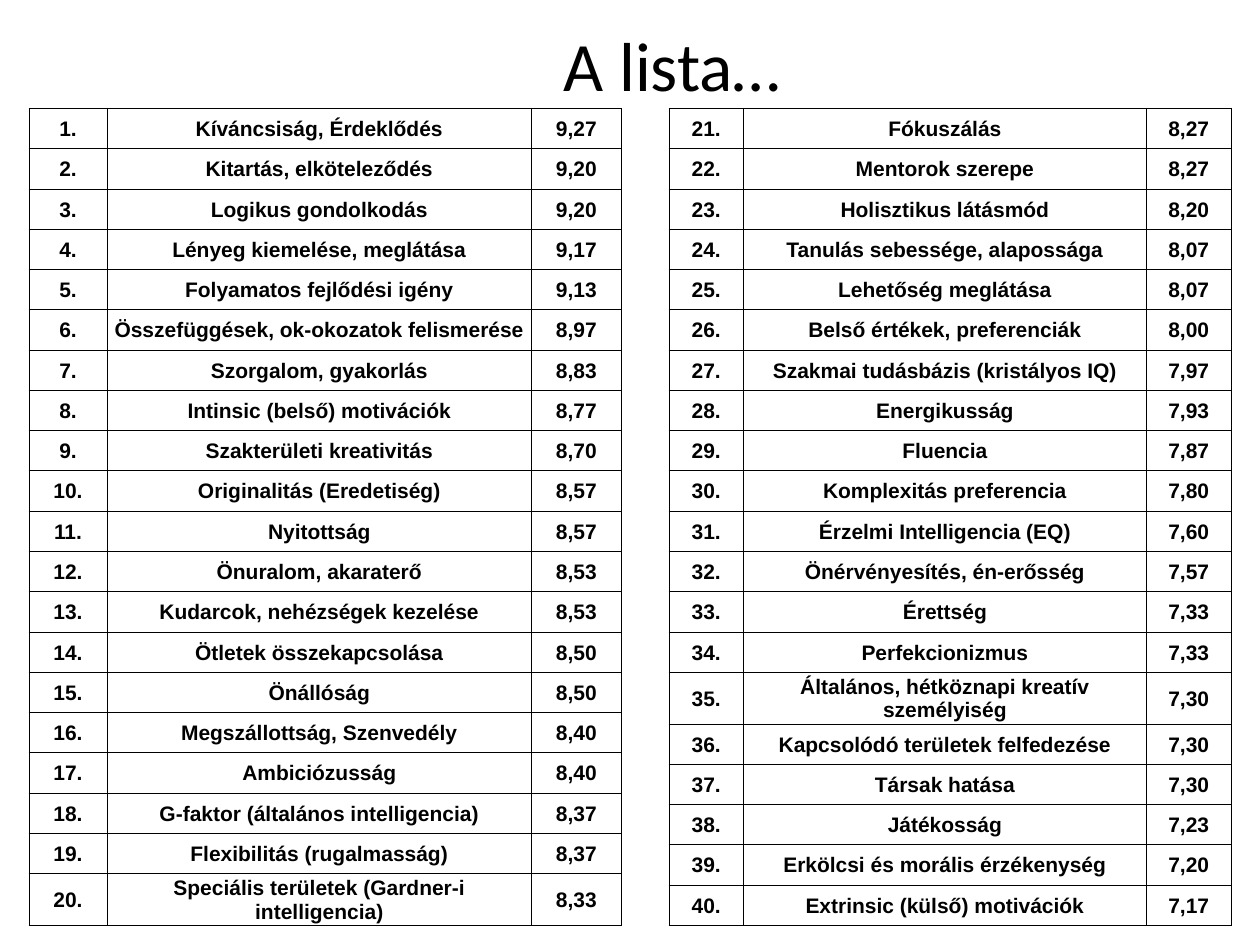
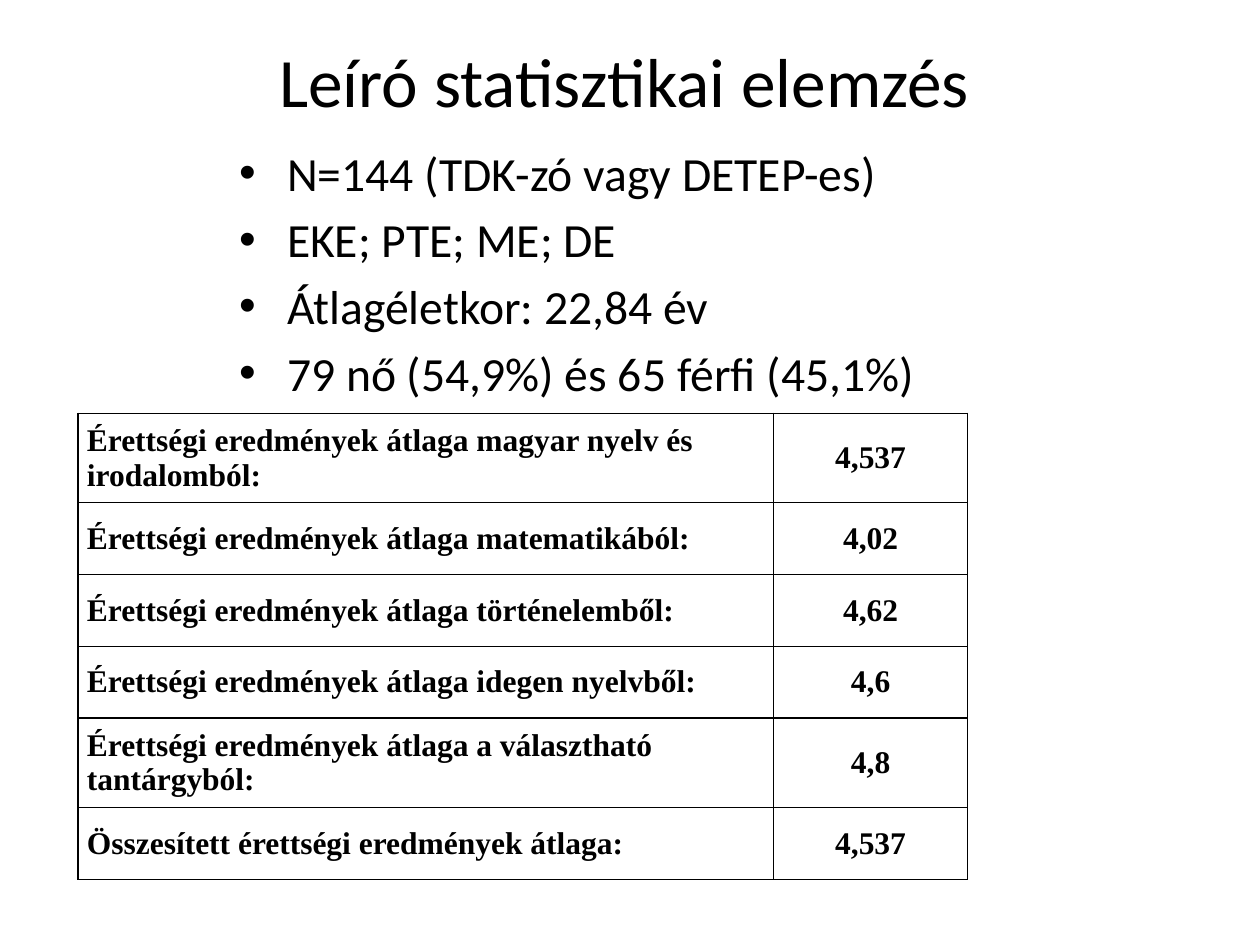
"""Build two slides: a ranked list of talent factors and a summary of the sample."""
from dataclasses import dataclass

from lxml import etree
from pptx import Presentation
from pptx.dml import color
from pptx.enum import text
from pptx.oxml import ns
from pptx.util import Inches, Pt

INK, PAPER = "000000", "FFFFFF"
LEFT, MID = text.PP_ALIGN.LEFT, text.PP_ALIGN.CENTER


@dataclass(frozen=True)
class Style:
    """Font of a block of text."""
    face: str
    size: float
    bold: bool = False


@dataclass(frozen=True)
class Box:
    """Place of a text box in inches."""
    left: float
    top: float
    width: float
    height: float


@dataclass(frozen=True)
class Grid:
    """Place, measures and look of a table."""
    left: float
    top: float
    cols: tuple[float, ...]
    rows: tuple[float, ...]
    aligns: tuple
    style: Style
    line: float
    pad: tuple[float, float, float, float]
    fill: str | None = None


TITLE = Style("Calibri", 39.6)
BODY = Style("Calibri", 27.2)
RANK = Style("Arial", 12, True)
MARK = Style("Times New Roman", 18, True)

FIRST = (
    ("Kíváncsiság, Érdeklődés", "9,27"),
    ("Kitartás, elköteleződés", "9,20"),
    ("Logikus gondolkodás", "9,20"),
    ("Lényeg kiemelése, meglátása", "9,17"),
    ("Folyamatos fejlődési igény", "9,13"),
    ("Összefüggések, ok-okozatok felismerése", "8,97"),
    ("Szorgalom, gyakorlás", "8,83"),
    ("Intinsic (belső) motivációk", "8,77"),
    ("Szakterületi kreativitás", "8,70"),
    ("Originalitás (Eredetiség)", "8,57"),
    ("Nyitottság", "8,57"),
    ("Önuralom, akaraterő", "8,53"),
    ("Kudarcok, nehézségek kezelése", "8,53"),
    ("Ötletek összekapcsolása", "8,50"),
    ("Önállóság", "8,50"),
    ("Megszállottság, Szenvedély", "8,40"),
    ("Ambiciózusság", "8,40"),
    ("G-faktor (általános intelligencia)", "8,37"),
    ("Flexibilitás (rugalmasság)", "8,37"),
    ("Speciális területek (Gardner-i intelligencia)", "8,33"),
)
SECOND = (
    ("Fókuszálás", "8,27"),
    ("Mentorok szerepe", "8,27"),
    ("Holisztikus látásmód", "8,20"),
    ("Tanulás sebessége, alapossága", "8,07"),
    ("Lehetőség meglátása", "8,07"),
    ("Belső értékek, preferenciák", "8,00"),
    ("Szakmai tudásbázis (kristályos IQ)", "7,97"),
    ("Energikusság", "7,93"),
    ("Fluencia", "7,87"),
    ("Komplexitás preferencia", "7,80"),
    ("Érzelmi Intelligencia (EQ)", "7,60"),
    ("Önérvényesítés, én-erősség", "7,57"),
    ("Érettség", "7,33"),
    ("Perfekcionizmus", "7,33"),
    ("Általános, hétköznapi kreatív személyiség", "7,30"),
    ("Kapcsolódó területek felfedezése", "7,30"),
    ("Társak hatása", "7,30"),
    ("Játékosság", "7,23"),
    ("Erkölcsi és morális érzékenység", "7,20"),
    ("Extrinsic (külső) motivációk", "7,17"),
)
FACTS = (
    "N=144 (TDK-zó vagy DETEP-es)",
    "EKE; PTE; ME; DE",
    "Átlagéletkor: 22,84 év",
    "79 nő (54,9%) és 65 férfi (45,1%)",
)
MEANS = (
    ("Érettségi eredmények átlaga magyar nyelv és irodalomból:", "4,537"),
    ("Érettségi eredmények átlaga matematikából:", "4,02"),
    ("Érettségi eredmények átlaga történelemből:", "4,62"),
    ("Érettségi eredmények átlaga idegen nyelvből:", "4,6"),
    ("Érettségi eredmények átlaga a választható tantárgyból:", "4,8"),
    ("Összesített érettségi eredmények átlaga:", "4,537"),
)


def paint(fill, tint: str) -> None:
    """Give a fill one solid colour."""
    fill.solid()
    fill.fore_color.rgb = color.RGBColor.from_string(tint)


def write(par, words: str, style: Style, align=LEFT) -> None:
    """Set the words, alignment and font of a paragraph."""
    par.text = words
    par.alignment = align
    font = par.font
    font.name, font.size, font.bold = style.face, Pt(style.size), style.bold
    paint(font.fill, INK)


def frame(slide, box: Box, anchor):
    """Add a wrapping text box and return its text frame."""
    shape = slide.shapes.add_textbox(*map(Inches, (box.left, box.top, box.width, box.height)))
    body = shape.text_frame
    body.word_wrap = True
    body.vertical_anchor = anchor
    return body


def head(slide, words: str, box: Box) -> None:
    """Add the slide title."""
    write(frame(slide, box, text.MSO_ANCHOR.MIDDLE).paragraphs[0], words, TITLE, MID)


def points(slide, items: tuple[str, ...], box: Box) -> None:
    """Add a bulleted list."""
    body = frame(slide, box, text.MSO_ANCHOR.TOP)
    for i, item in enumerate(items):
        par = body.add_paragraph() if i else body.paragraphs[0]
        if i:
            par.space_before = Pt(BODY.size * 0.2)
        props = par._p.get_or_add_pPr()
        props.set("marL", str(Inches(0.38)))
        props.set("indent", str(-Inches(0.38)))
        etree.SubElement(props, ns.qn("a:buFont"), typeface="Arial")
        etree.SubElement(props, ns.qn("a:buChar"), char="•")
        write(par, item, BODY)


def edge(cell, width: float) -> None:
    """Draw the four borders of a cell."""
    props = cell._tc.get_or_add_tcPr()
    for side in "LRTB":
        line = etree.SubElement(props, ns.qn(f"a:ln{side}"), w=str(Pt(width)))
        solid = etree.SubElement(line, ns.qn("a:solidFill"))
        etree.SubElement(solid, ns.qn("a:srgbClr"), val=INK)


def table(slide, grid: Grid, data) -> None:
    """Add a bordered table filled with rows of text."""
    sizes = map(Inches, (grid.left, grid.top, sum(grid.cols), sum(grid.rows)))
    tab = slide.shapes.add_table(len(grid.rows), len(grid.cols), *sizes).table
    tab.first_row = tab.horz_banding = False
    for col, width in zip(tab.columns, grid.cols):
        col.width = Inches(width)
    for row, height, words in zip(tab.rows, grid.rows, data):
        row.height = Inches(height)
        for cell, word, align in zip(row.cells, words, grid.aligns):
            pad = map(Inches, grid.pad)
            cell.margin_left, cell.margin_top, cell.margin_right, cell.margin_bottom = pad
            cell.vertical_anchor = text.MSO_ANCHOR.MIDDLE
            edge(cell, grid.line)
            if grid.fill:
                paint(cell.fill, grid.fill)
            else:
                cell.fill.background()
            write(cell.text_frame.paragraphs[0], word, grid.style, align)


def ranks(slide, left: float, cols: tuple[float, ...], start: int, data) -> None:
    """Add one numbered half of the ranked list."""
    grid = Grid(left, 0.86, cols, (0.32,) * len(data), (MID,) * 3, RANK, 0.5,
                (0.01, 0.01, 0.01, 0))
    table(slide, grid, [(f"{n}.", *pair) for n, pair in enumerate(data, start)])


def main() -> None:
    """Build and save both slides."""
    deck = Presentation()
    deck.slide_width, deck.slide_height = Inches(10), Inches(7.5)
    blank = deck.slide_layouts[6]

    chart = deck.slides.add_slide(blank)
    head(chart, "A lista…", Box(1.25, 0.23, 8.17, 0.56))
    ranks(chart, 0.23, (0.62, 3.37, 0.71), 1, FIRST)
    ranks(chart, 5.31, (0.59, 3.2, 0.67), len(FIRST) + 1, SECOND)

    stats = deck.slides.add_slide(blank)
    head(stats, "Leíró statisztikai elemzés", Box(1.21, 0.44, 7.49, 0.38))
    points(stats, FACTS, Box(1.8, 1.09, 7.46, 1.89))
    low, tall = 0.57, 0.71
    table(stats, Grid(0.62, 3.28, (5.52, 1.54), (tall, low, low, low, tall, low),
                      (LEFT, MID), MARK, 1, (0.07, 0, 0.07, 0), PAPER), MEANS)

    deck.save("out.pptx")


if __name__ == "__main__":
    main()
